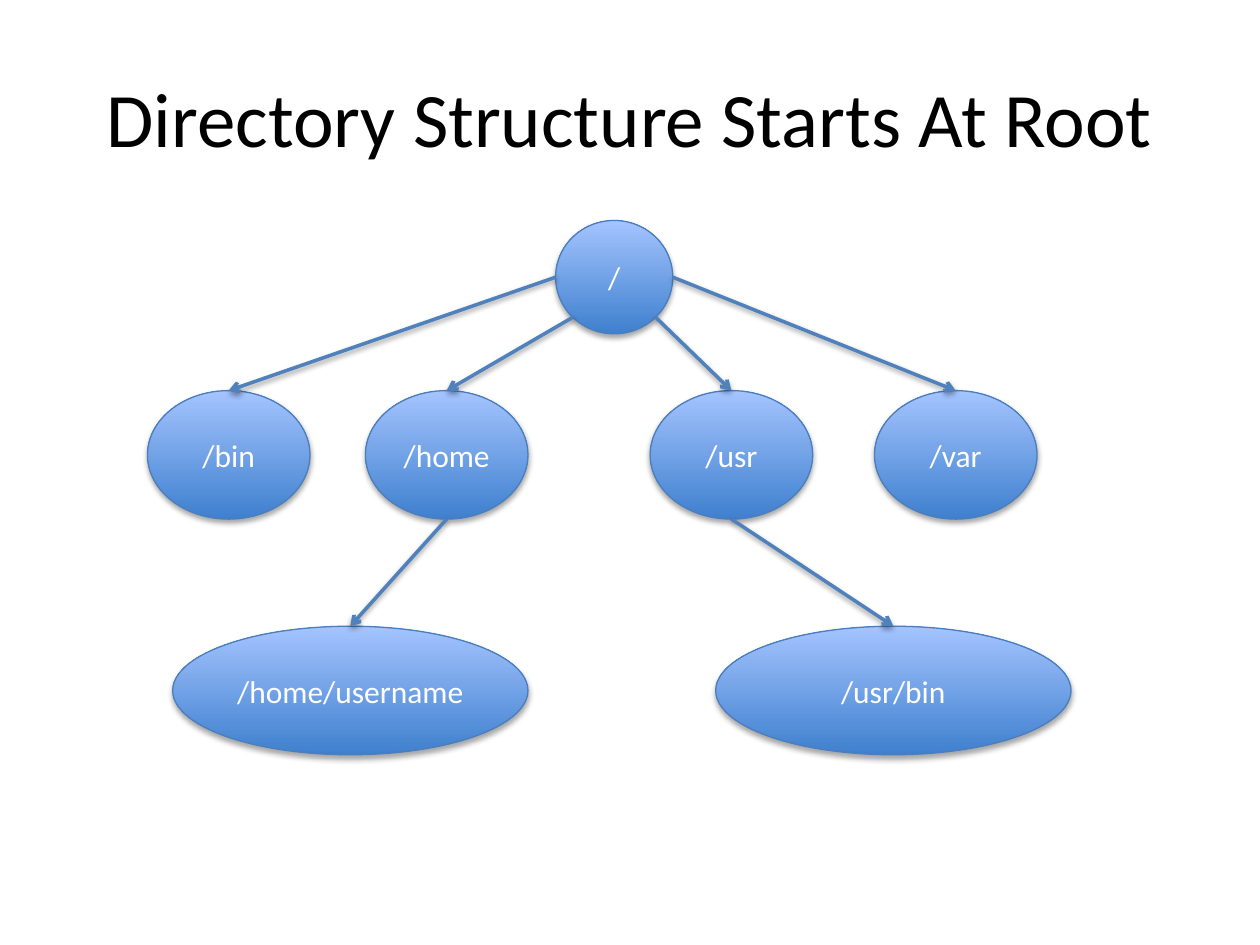
from math import cos, radians, sin

from lxml import etree
from pptx import Presentation
from pptx.dml.color import RGBColor
from pptx.enum.shapes import MSO_CONNECTOR, MSO_SHAPE
from pptx.enum.text import MSO_ANCHOR, PP_ALIGN
from pptx.oxml.ns import qn
from pptx.util import Inches, Pt

OVAL = MSO_SHAPE.OVAL
STRAIGHT = MSO_CONNECTOR.STRAIGHT
CENTER = PP_ALIGN.CENTER
MIDDLE = MSO_ANCHOR.MIDDLE
TITLE_ONLY = 5
TOP = 0

# name: (left, top, width, height) in inches
FOLDERS = {
    "/": (4.41, 1.75, 0.93, 0.9),
    "/home": (2.9, 3.1, 1.29, 1.02),
    "/var": (6.94, 3.1, 1.29, 1.02),
    "/bin": (1.17, 3.1, 1.29, 1.02),
    "/usr": (5.16, 3.1, 1.29, 1.02),
    "/home/username": (1.37, 4.97, 2.82, 1.02),
    "/usr/bin": (5.68, 4.97, 2.82, 1.02),
}
# parent, child, angle on the parent's rim (clockwise from the right)
BRANCHES = [
    ("/", "/home", 135),
    ("/", "/usr", 45),
    ("/", "/var", 0),
    ("/", "/bin", 180),
    ("/home", "/home/username", 90),
    ("/usr", "/usr/bin", 90),
]


def color(value):
    return RGBColor.from_string(value)


def add_shadow(effects, distance, opacity):
    """Put a soft black shadow straight below the element."""
    shadow = etree.SubElement(
        effects, qn("a:outerShdw"), blurRad=str(Pt(3.15)),
        dist=str(Pt(distance)), dir="5400000", rotWithShape="0")
    black = etree.SubElement(shadow, qn("a:srgbClr"), val="000000")
    etree.SubElement(black, qn("a:alpha"), val=str(opacity * 1000))


class TreeSlide:
    font = "Calibri"
    fill_stops = ("3F80CE", "A4C4FF")
    outline = "4B7EBC"
    arrow_color = "4F81BD"

    def __init__(self, deck):
        self.slide = deck.slides.add_slide(deck.slide_layouts[TITLE_ONLY])

    def set_text(self, frame, text, size, text_color):
        frame.text = text
        frame.word_wrap = True
        frame.vertical_anchor = MIDDLE
        para = frame.paragraphs[0]
        para.alignment = CENTER
        para.font.name = self.font
        para.font.size = Pt(size)
        para.font.color.rgb = color(text_color)

    def title(self, text):
        title = self.slide.shapes.title
        title.left, title.top = Inches(0.5), Inches(0.3)
        title.width, title.height = Inches(9), Inches(1.25)
        self.set_text(title.text_frame, text, 44, "000000")

    def folder(self, name, bounds):
        oval = self.slide.shapes.add_shape(OVAL, *map(Inches, bounds))
        oval.fill.gradient()
        oval.fill.gradient_angle = 90
        for stop, value in zip(oval.fill.gradient_stops, self.fill_stops):
            stop.color.rgb = color(value)
        oval.line.color.rgb = color(self.outline)
        oval.line.width = Pt(0.75)
        oval.shadow.inherit = False
        add_shadow(oval.element.spPr.find(qn("a:effectLst")), 1.8, 35)
        self.set_text(oval.text_frame, name, 18, "FFFFFF")
        return oval

    def branch(self, parent, child, angle):
        """Draw an arrow from the parent's rim to the top of the child."""
        across = (1 + cos(radians(angle))) / 2
        down = (1 + sin(radians(angle))) / 2
        start_x = int(parent.left + parent.width * across)
        start_y = int(parent.top + parent.height * down)
        arrow = self.slide.shapes.add_connector(
            STRAIGHT, start_x, start_y, child.left, child.top)
        arrow.end_connect(child, TOP)
        arrow.line.color.rgb = color(self.arrow_color)
        arrow.line.width = Pt(2)
        properties = arrow.element.spPr
        etree.SubElement(properties.find(qn("a:ln")), qn("a:tailEnd"), type="arrow")
        add_shadow(etree.SubElement(properties, qn("a:effectLst")), 1.6, 38)


def main():
    deck = Presentation()
    deck.slide_width, deck.slide_height = Inches(10), Inches(7.5)
    page = TreeSlide(deck)
    page.title("Directory Structure Starts At Root")
    ovals = {name: page.folder(name, bounds) for name, bounds in FOLDERS.items()}
    for parent, child, angle in BRANCHES:
        page.branch(ovals[parent], ovals[child], angle)
    deck.save("out.pptx")


if __name__ == "__main__":
    main()
